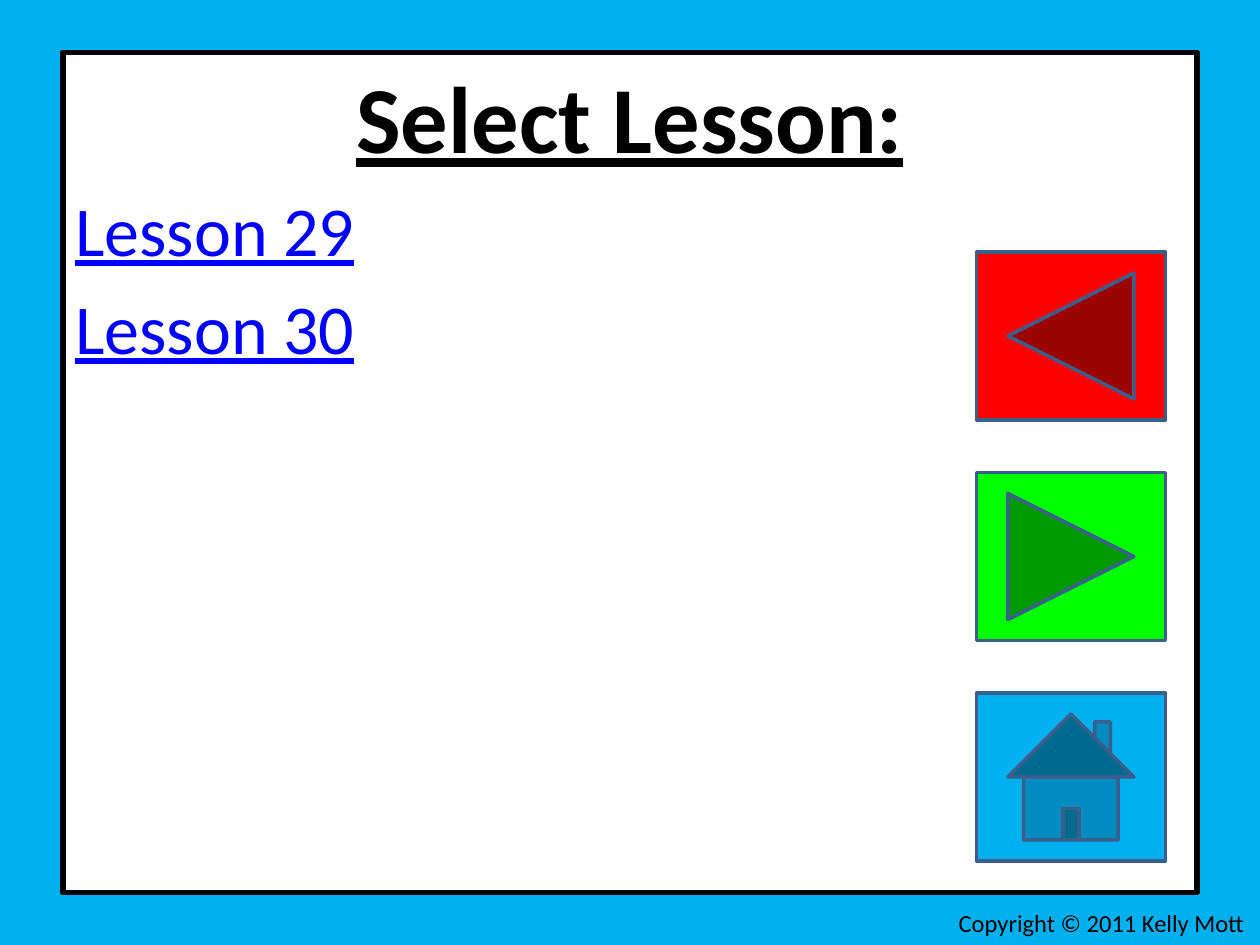
from pptx import Presentation
from pptx.dml.color import RGBColor
from pptx.enum.shapes import MSO_SHAPE
from pptx.enum.text import MSO_ANCHOR, MSO_AUTO_SIZE, PP_ALIGN
from pptx.util import Pt

SKY = RGBColor(0x00, 0xB0, 0xF0)
WHITE = RGBColor(0xFF, 0xFF, 0xFF)
BLACK = RGBColor(0x00, 0x00, 0x00)
LINK_BLUE = RGBColor(0x00, 0x00, 0xFF)
RED = RGBColor(0xFF, 0x00, 0x00)
GREEN = RGBColor(0x00, 0xFF, 0x00)
BUTTON_EDGE = RGBColor(0x3A, 0x5F, 0x8C)

LESSONS = ["Lesson 29", "Lesson 30"]
BUTTONS = [
    (MSO_SHAPE.ACTION_BUTTON_BACK_OR_PREVIOUS, RED),
    (MSO_SHAPE.ACTION_BUTTON_FORWARD_OR_NEXT, GREEN),
    (MSO_SHAPE.ACTION_BUTTON_HOME, SKY),
]
BUTTON_TOP, BUTTON_PITCH = 144, 126


def add_filled(slide, preset, left, top, width, height, fill, edge, edge_width):
    shape = slide.shapes.add_shape(preset, Pt(left), Pt(top), Pt(width), Pt(height))
    shape.shadow.inherit = False
    shape.fill.solid()
    shape.fill.fore_color.rgb = fill
    shape.line.color.rgb = edge
    shape.line.width = Pt(edge_width)
    return shape


def format_text(paragraph, size, color, bold=False, underline=False):
    for run in paragraph.runs:
        run.font.name = "Calibri"
        run.font.size = Pt(size)
        run.font.color.rgb = color
        run.font.bold = bold
        run.font.underline = underline


def add_lesson_panel(slide):
    panel = add_filled(slide, MSO_SHAPE.RECTANGLE, 36, 30, 648, 480, WHITE, BLACK, 3.25)
    frame = panel.text_frame
    frame.word_wrap = True
    frame.vertical_anchor = MSO_ANCHOR.TOP
    frame.text = "\n".join(["Select Lesson:"] + LESSONS)
    heading, *lessons = frame.paragraphs
    heading.alignment = PP_ALIGN.CENTER
    format_text(heading, 54, BLACK, bold=True, underline=True)
    for lesson in lessons:
        lesson.alignment = PP_ALIGN.LEFT
        lesson.space_before = Pt(8)
        format_text(lesson, 40, LINK_BLUE, underline=True)


def add_copyright(slide):
    notice = slide.shapes.add_textbox(Pt(540.7), Pt(515.5), Pt(179.3), Pt(24.5))
    frame = notice.text_frame
    frame.word_wrap = False
    frame.auto_size = MSO_AUTO_SIZE.SHAPE_TO_FIT_TEXT
    frame.text = "Copyright © 2011 Kelly Mott"
    format_text(frame.paragraphs[0], 14, BLACK)


def add_navigation(slide):
    for row, (preset, fill) in enumerate(BUTTONS):
        top = BUTTON_TOP + row * BUTTON_PITCH
        add_filled(slide, preset, 558, top, 108, 96, fill, BUTTON_EDGE, 2)


def main():
    deck = Presentation()
    deck.slide_width, deck.slide_height = Pt(720), Pt(540)
    slide = deck.slides.add_slide(deck.slide_layouts[6])
    slide.background.fill.solid()
    slide.background.fill.fore_color.rgb = SKY
    add_lesson_panel(slide)
    add_copyright(slide)
    add_navigation(slide)
    deck.save("out.pptx")


if __name__ == "__main__":
    main()
